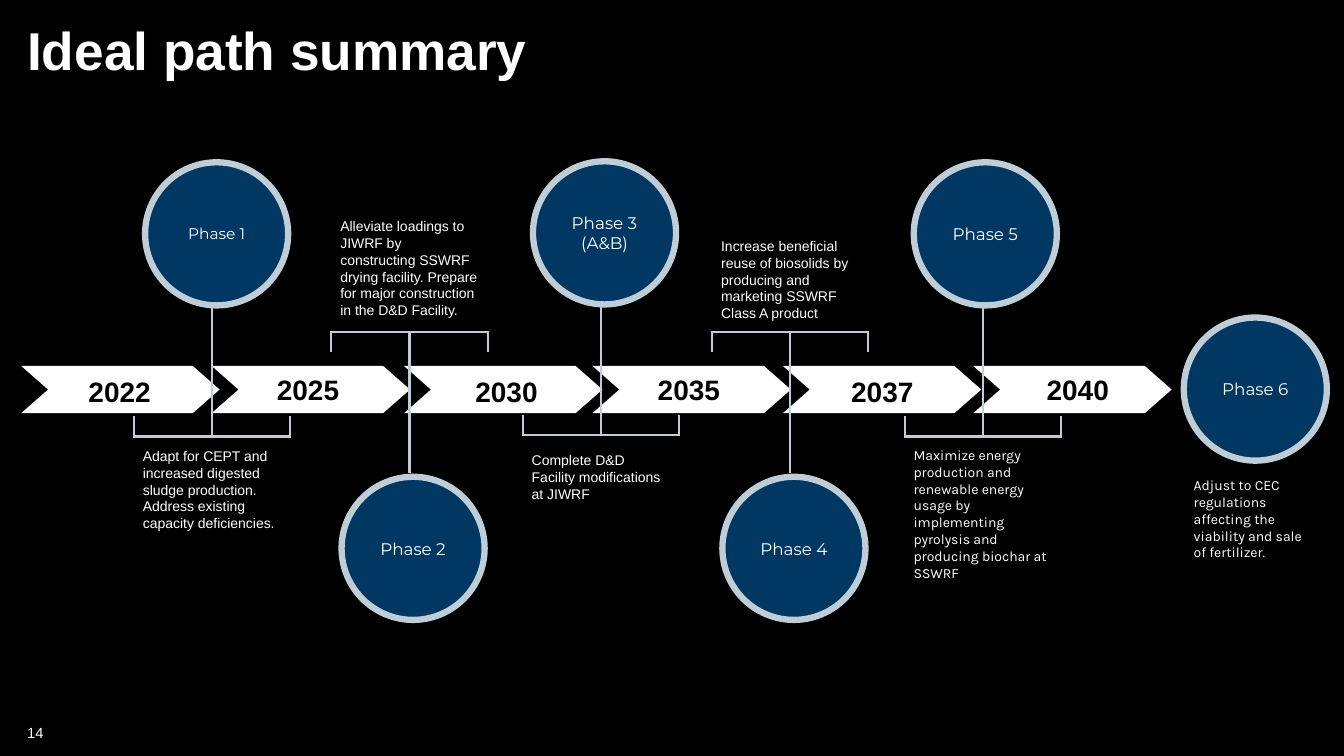
"""Build the phased timeline slide."""
from dataclasses import dataclass

import pptx
import pptx.dml.color
import pptx.enum.shapes
import pptx.enum.text
import pptx.util
from lxml import etree

Inches = pptx.util.Inches
Pt = pptx.util.Pt
Anchor = pptx.enum.text.MSO_ANCHOR
Align = pptx.enum.text.PP_ALIGN
Preset = pptx.enum.shapes.MSO_SHAPE

BLACK, WHITE, NAVY, SILVER = "000000", "FFFFFF", "003763", "BFCDD7"
CIRCLE = 1.42
BRACKET = 1.57
TICK = 0.2
STEM = 1.4
CHEVRON_TOP, CHEVRON_WIDTH, CHEVRON_HEIGHT = 3.63, 1.97, 0.47


@dataclass
class Year:
    label: str
    chevron_left: float
    label_left: float
    label_top: float


@dataclass
class Phase:
    name: str
    circle_left: float
    circle_top: float
    caption: str
    caption_left: float
    caption_top: float
    caption_height: float
    font: str = "Arial"
    name_size: float = 12
    bar: float | None = None
    circle_above: bool = True


YEARS = [
    Year("2022", 0.21, 0.78, 3.74),
    Year("2025", 2.1, 2.65, 3.72),
    Year("2030", 4.01, 4.62, 3.74),
    Year("2035", 5.88, 6.43, 3.72),
    Year("2037", 7.77, 8.35, 3.74),
    Year("2040", 9.66, 10.29, 3.72),
]
PHASES = [
    Phase("Phase 6", 11.75, 3.15,
          "Adjust to CEC regulations affecting the viability and sale of fertilizer.",
          11.75, 4.68, 0.77, font="Karla"),
    Phase("Phase 1", 1.44, 1.61,
          "Adapt for CEPT and increased digested sludge production. "
          "Address existing capacity deficiencies.",
          1.32, 4.39, 0.94, name_size=11, bar=4.33),
    Phase("Phase 2", 3.39, 4.73,
          "Alleviate loadings to JIWRF by constructing SSWRF drying facility. "
          "Prepare for major construction in the D&D Facility.",
          3.28, 2.1, 1.11, bar=3.29, circle_above=False),
    Phase("Phase 3\v(A&B)", 5.29, 1.6,
          "Complete D&D Facility modifications at JIWRF",
          5.18, 4.43, 0.61, bar=4.32),
    Phase("Phase 4", 7.17, 4.73,
          "Increase beneficial reuse of biosolids by producing and "
          "marketing SSWRF Class A product",
          7.06, 2.3, 0.94, bar=3.29, circle_above=False),
    Phase("Phase 5", 9.07, 1.61,
          "Maximize energy production and renewable energy usage by "
          "implementing pyrolysis and producing biochar at SSWRF",
          8.97, 4.38, 1.11, font="Karla", bar=4.33),
]


def paint(target, color: str) -> None:
    target.solid()
    target.fore_color.rgb = pptx.dml.color.RGBColor.from_string(color)


def write(box, text: str, size: float, font: str = "Arial", color: str = WHITE,
          bold: bool = False, align=Align.LEFT, anchor=Anchor.MIDDLE,
          inset: bool = True) -> None:
    frame = box.text_frame
    frame.text = text
    frame.word_wrap = True
    frame.auto_size = pptx.enum.text.MSO_AUTO_SIZE.NONE
    frame.vertical_anchor = anchor
    if not inset:
        frame.margin_left = frame.margin_right = 0
        frame.margin_top = frame.margin_bottom = 0
    para = frame.paragraphs[0]
    para.alignment = align
    for span in para.runs:
        span.font.name = font
        span.font.size = Pt(size)
        span.font.bold = bold
        paint(span.font.fill, color)


def add_text(page, left: float, top: float, width: float, height: float,
             text: str, size: float, **style) -> None:
    box = page.shapes.add_textbox(Inches(left), Inches(top), Inches(width), Inches(height))
    write(box, text, size, **style)


def add_preset(page, preset, left: float, top: float, width: float, height: float, color: str):
    shape = page.shapes.add_shape(
        preset, Inches(left), Inches(top), Inches(width), Inches(height))
    shape.shadow.inherit = False
    paint(shape.fill, color)
    shape.line.fill.background()
    return shape


def add_line(page, start_x: float, start_y: float, end_x: float, end_y: float) -> None:
    line = page.shapes.add_connector(
        pptx.enum.shapes.MSO_CONNECTOR.STRAIGHT,
        Inches(start_x), Inches(start_y), Inches(end_x), Inches(end_y))
    paint(line.line.fill, SILVER)
    line.line.width = Pt(1.5)
    properties = line._element.spPr
    etree.SubElement(properties, pptx.oxml.ns.qn("a:effectLst"))


def add_chevron(page, year: Year) -> None:
    chevron = add_preset(page, Preset.CHEVRON, year.chevron_left, CHEVRON_TOP,
                         CHEVRON_WIDTH, CHEVRON_HEIGHT, WHITE)
    chevron.adjustments[0] = 0.57


def add_bracket(page, left: float, bar: float, direction: int) -> None:
    middle = left + BRACKET / 2
    add_line(page, left, bar, left + BRACKET, bar)
    add_line(page, middle, bar, middle, bar + direction * STEM)
    for edge in (left + 0.01, left + BRACKET - 0.01):
        add_line(page, edge, bar, edge, bar + direction * TICK)


def add_phase(page, phase: Phase) -> None:
    add_text(page, phase.caption_left, phase.caption_top, BRACKET if phase.bar else CIRCLE,
             phase.caption_height, phase.caption, 10, font=phase.font,
             anchor=Anchor.TOP if phase.circle_above else Anchor.BOTTOM)
    if phase.bar:
        add_bracket(page, phase.caption_left, phase.bar, -1 if phase.circle_above else 1)
    circle = add_preset(page, Preset.OVAL, phase.circle_left, phase.circle_top,
                        CIRCLE, CIRCLE, NAVY)
    paint(circle.line.fill, SILVER)
    circle.line.width = Pt(4.5)
    write(circle, phase.name, phase.name_size, font="Montserrat", align=Align.CENTER)


def add_title(page) -> None:
    title = page.shapes.title
    title.left, title.top = Inches(0.27), Inches(0.23)
    title.width, title.height = Inches(12.8), Inches(0.58)
    write(title, "Ideal path summary", 38, bold=True, anchor=Anchor.BOTTOM, inset=False)
    title.text_frame.paragraphs[0].line_spacing = 0.9


def main() -> None:
    deck = pptx.Presentation()
    deck.slide_width, deck.slide_height = Inches(13.34), Inches(7.5)
    page = deck.slides.add_slide(deck.slide_layouts[5])
    paint(page.background.fill, BLACK)
    add_title(page)
    for year in YEARS:
        add_chevron(page, year)
    for year in YEARS:
        add_text(page, year.label_left, year.label_top, 0.84, 0.28, year.label, 20,
                 color=BLACK, bold=True)
    for phase in PHASES:
        add_phase(page, phase)
    add_text(page, 0.27, 7.15, 0.57, 0.24, "14", 10.5, inset=False)
    deck.save("out.pptx")


if __name__ == "__main__":
    main()
